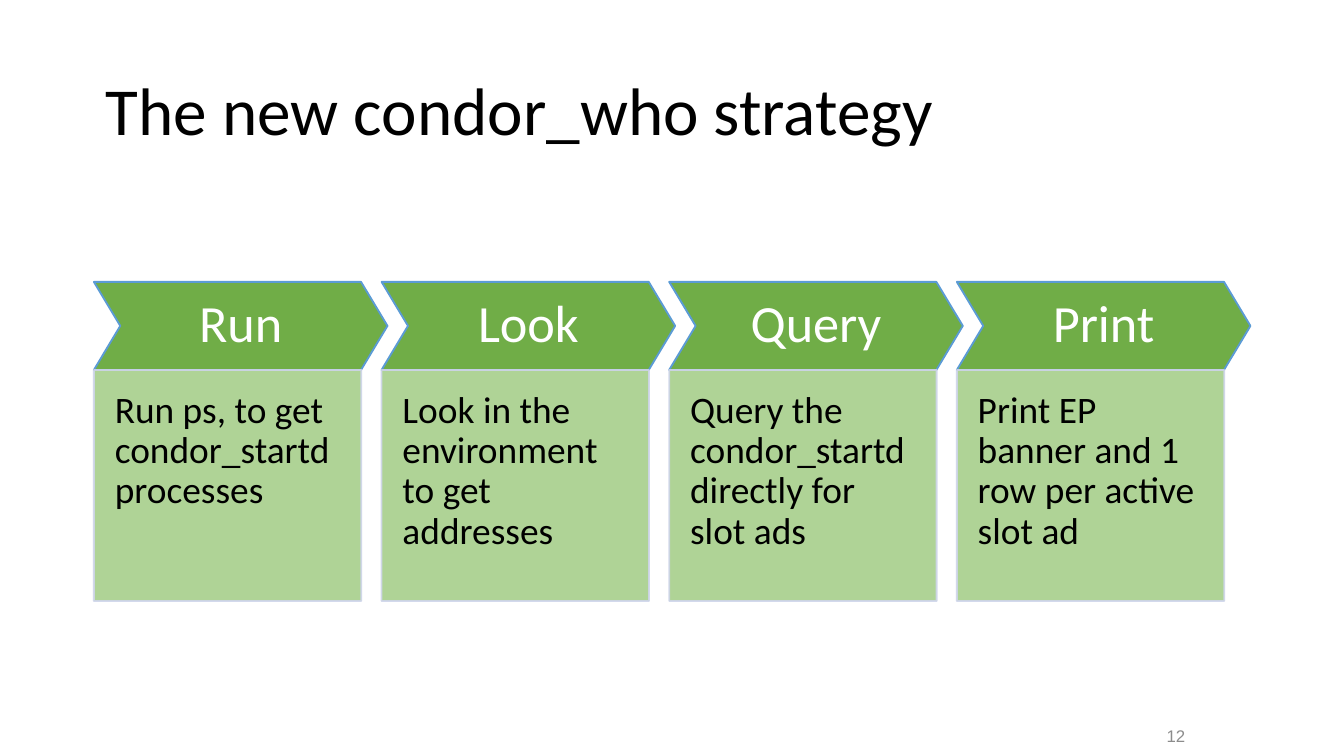
from lxml.etree import SubElement
from pptx import Presentation
from pptx.dml.color import RGBColor
from pptx.enum.shapes import MSO_SHAPE as Preset
from pptx.enum.text import MSO_ANCHOR as Anchor, MSO_AUTO_SIZE as AutoSize, PP_ALIGN as Align
from pptx.oxml.ns import qn
from pptx.util import Pt

STEPS = [
    ("Run", "Run ps, to get condor_startd processes"),
    ("Look", "Look in the environment to get addresses"),
    ("Query", "Query the condor_startd directly for slot ads"),
    ("Print", "Print EP banner and 1 row per active slot ad"),
]
LEFT, STEP_PITCH = 50.3, 154.1
HEAD_TOP, HEAD_WIDTH, HEAD_HEIGHT = 151, 157.3, 47.2
CARD_WIDTH, CARD_HEIGHT = 143.3, 123.8


def color(value):
    return RGBColor.from_string(value)


def write(frame, text, size, ink="000000", font="Calibri", align=Align.LEFT,
          anchor=Anchor.TOP, insets=(7.2, 3.6, 7.2, 3.6), spacing=0.9):
    frame.word_wrap = True
    frame.auto_size = AutoSize.NONE
    frame.vertical_anchor = anchor
    sides = [Pt(inset) for inset in insets]
    frame.margin_left, frame.margin_top, frame.margin_right, frame.margin_bottom = sides
    para = frame.paragraphs[0]
    para.alignment = align
    para.line_spacing = spacing
    para.space_before = Pt(0)
    span = para.add_run()
    span.text = text
    span.font.size = Pt(size)
    span.font.name = font
    span.font.color.rgb = color(ink)


class SlideBuilder:
    head_fill, head_line = "70AD47", "5B9BD5"
    card_fill, card_line = "A7CF8B", "CFD5EA"

    def __init__(self, page):
        self.page = page

    def title(self, text, left, top, width, height):
        box = self.page.shapes.title
        box.left, box.top, box.width, box.height = Pt(left), Pt(top), Pt(width), Pt(height)
        write(box.text_frame, text, 36, anchor=Anchor.MIDDLE)

    def shape(self, preset, left, top, width, height, fill, line):
        shape = self.page.shapes.add_shape(preset, Pt(left), Pt(top), Pt(width), Pt(height))
        shape.shadow.inherit = False
        shape.fill.solid()
        shape.fill.fore_color.rgb = color(fill)
        shape.line.color.rgb = color(line)
        shape.line.width = Pt(1)
        return shape

    def heading(self, text, left):
        chevron = self.shape(Preset.CHEVRON, left, HEAD_TOP, HEAD_WIDTH, HEAD_HEIGHT,
                             self.head_fill, self.head_line)
        chevron.adjustments[0] = 0.3
        write(chevron.text_frame, text, 28, ink="FFFFFF", align=Align.CENTER,
              anchor=Anchor.MIDDLE, insets=(5.6, 5.6, 5.6, 5.6))

    def card(self, text, left):
        card = self.shape(Preset.RECTANGLE, left, HEAD_TOP + HEAD_HEIGHT, CARD_WIDTH,
                          CARD_HEIGHT, self.card_fill, self.card_line)
        for tint in card.element.spPr.iter(qn("a:srgbClr")):
            SubElement(tint, qn("a:alpha"), val="90000")
        write(card.text_frame, text, 20, insets=(11.2, 11.2, 11.2, 22.4))

    def page_number(self, text, left, top, width, height):
        box = self.page.shapes.add_textbox(Pt(left), Pt(top), Pt(width), Pt(height))
        write(box.text_frame, text, 9, ink="8C8C8C", font="Arial", align=Align.CENTER,
              anchor=Anchor.BOTTOM, spacing=1.0)


def main():
    deck = Presentation()
    deck.slide_width, deck.slide_height = Pt(720), Pt(405)
    builder = SlideBuilder(deck.slides.add_slide(deck.slide_layouts[5]))
    builder.title("The new condor_who strategy", 49.5, 21.6, 621, 78.3)
    for index, (name, detail) in enumerate(STEPS):
        left = LEFT + index * STEP_PITCH
        builder.heading(name, left)
        builder.card(detail, left)
    builder.page_number("12", 589.5, 381.6, 81, 21.6)
    deck.save("out.pptx")


if __name__ == "__main__":
    main()
